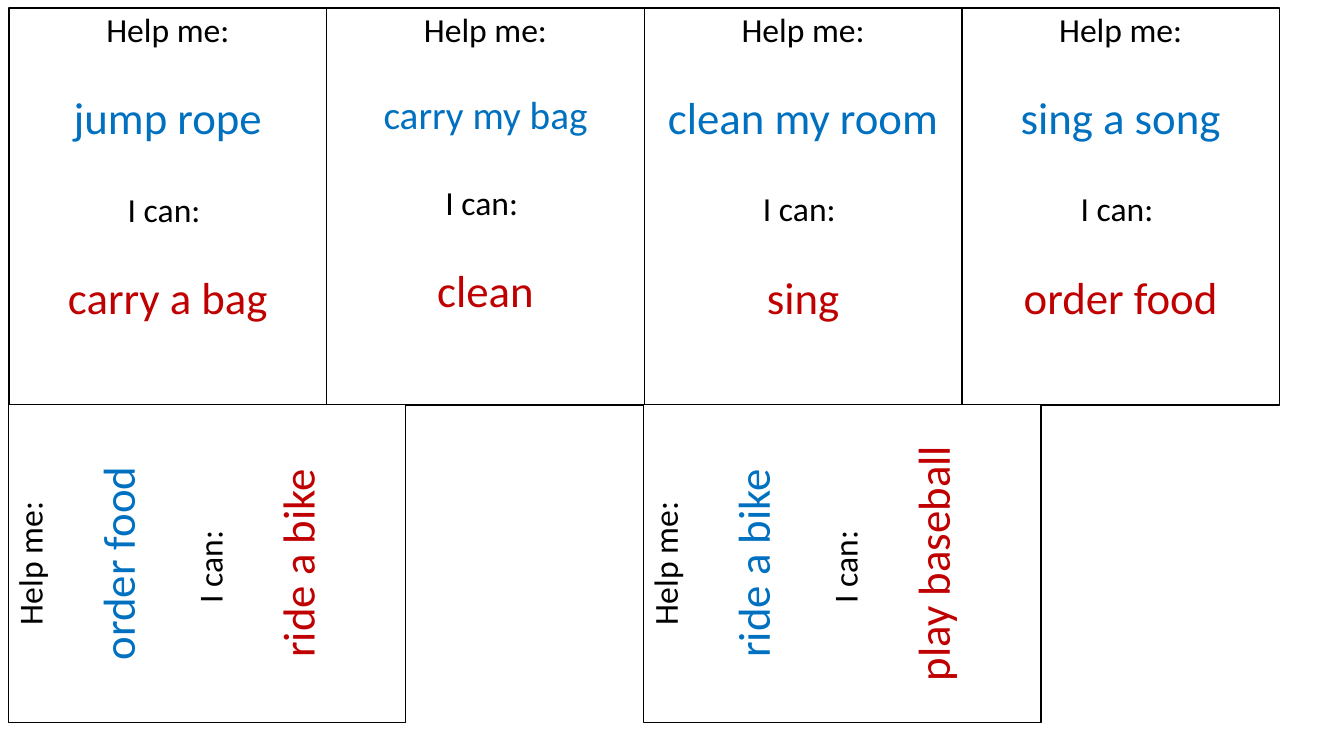
from pptx import Presentation
from pptx import util as u
from pptx.dml.color import RGBColor
from pptx.enum import shapes, text

PX = 9144
BLACK = RGBColor(0x00, 0x00, 0x00)
WHITE = RGBColor(0xFF, 0xFF, 0xFF)
BLUE = RGBColor(0x00, 0x70, 0xC0)
RED = RGBColor(0xC0, 0x00, 0x00)
LEFT, TOP, CARD_W, CARD_H = 9, 8, 315, 394

UPRIGHT = [
    ("jump rope", 32, "carry a bag"),
    ("carry my bag", 28, "clean"),
    ("clean my room", 32, "sing"),
    ("sing a song", 32, "order food"),
]
SIDEWAYS = [
    ("order food", 32, "ride a bike"),
    ("ride a bike", 32, "play baseball"),
]


def add_line(p, words, size, color, gap):
    p.alignment = text.PP_ALIGN.CENTER
    p.line_spacing = 0.9
    p.space_before = u.Pt(gap)
    p.space_after = u.Pt(0)
    r = p.add_run()
    r.text = words
    r.font.name = "Calibri"
    r.font.size = u.Pt(size)
    r.font.color.rgb = color


def format_card(sp, x, y, need, need_size, skill):
    sp.left, sp.top = x * PX, y * PX
    sp.width, sp.height = CARD_W * PX, CARD_H * PX
    sp.fill.solid()
    sp.fill.fore_color.rgb = WHITE
    sp.line.color.rgb = BLACK
    sp.line.width = u.Pt(1)
    tf = sp.text_frame
    tf.word_wrap = True
    tf.auto_size = text.MSO_AUTO_SIZE.NONE
    tf.vertical_anchor = text.MSO_ANCHOR.TOP
    lines = [
        ("Help me:", 24, BLACK, 0),
        (need, need_size, BLUE, 33),
        ("I can: ", 24, BLACK, 35),
        (skill, 32, RED, 33),
    ]
    for i, line in enumerate(lines):
        p = tf.add_paragraph() if i else tf.paragraphs[0]
        add_line(p, *line)


def add_card(s, x, y, card, rotation=0):
    sp = s.shapes.add_shape(shapes.MSO_SHAPE.RECTANGLE, 0, 0, 0, 0)
    sp.shadow.inherit = False
    sp.rotation = rotation
    format_card(sp, x, y, *card)


def main():
    prs = Presentation()
    prs.slide_width, prs.slide_height = 1333 * PX, 750 * PX
    s = prs.slides.add_slide(prs.slide_layouts[5])
    format_card(s.shapes.title, LEFT, TOP, *UPRIGHT[0])
    for i, card in enumerate(UPRIGHT[1:], 1):
        add_card(s, LEFT + i * CARD_W, TOP, card)
    turn = (CARD_H - CARD_W) // 2
    for i, card in enumerate(SIDEWAYS):
        add_card(s, LEFT + turn + 2 * i * CARD_W, TOP + CARD_H - turn - 1, card, 270)
    prs.save("out.pptx")


if __name__ == "__main__":
    main()
